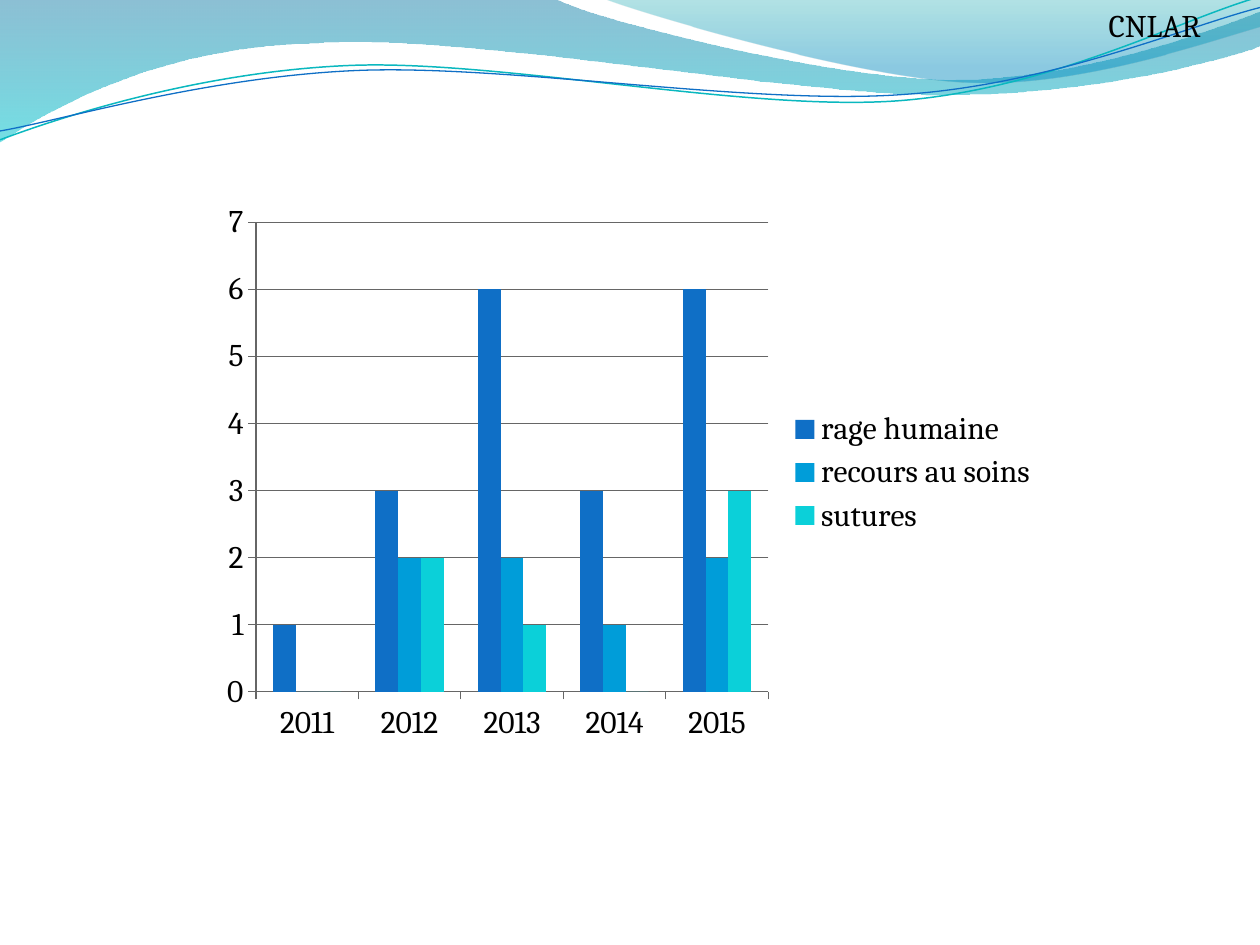
from dataclasses import dataclass
from math import cos, radians, sin

from lxml.etree import SubElement
from pptx import Presentation
from pptx.chart.data import CategoryChartData
from pptx.dml.color import RGBColor
from pptx.enum.chart import XL_CHART_TYPE, XL_LEGEND_POSITION, XL_TICK_MARK
from pptx.oxml.ns import qn
from pptx.util import Inches, Pt


@dataclass(frozen=True)
class Theme:
    font: str = "Cambria"
    size: int = 18
    ink: str = "000000"
    axis: str = "666666"
    series: tuple = ("0F6FC6", "009DD9", "0BD0D9")
    back_wave: tuple = ((0, "0074A1", 45), (1, "00C6CF", 55))
    front_wave: tuple = ((0, "00A1A9", 30), (0.8, "008BBF", 45))
    teal_line: str = "0AB8BF"
    blue_line: str = "0F6FC6"


THEME = Theme()
STRAND_TILT = 2.7

BACK_WAVE = [
    (0, 0), (4.4, -0.01),
    (4.76, 0.17, 6.64, 0.63, 7.58, 0.63),
    (8.53, 0.63, 9.58, 0.26, 10, 0.09),
    (10.01, 0.36),
    (9.83, 0.44, 8.7, 0.76, 7.46, 0.75),
    (6.22, 0.75, 3.82, 0.28, 2.57, 0.34),
    (1.29, 0.36, 0.46, 0.83, -0.01, 1.13),
]
FRONT_WAVE = [
    (4.79, -0.01),
    (5.09, 0.11, 6.82, 0.62, 7.69, 0.65),
    (8.56, 0.69, 9.61, 0.32, 10, 0.21),
    (10, 0),
]
TEAL_STRAND = [
    (0, 1.11),
    (0.48, 0.93, 1.58, 0.57, 2.77, 0.52),
    (3.95, 0.47, 5.93, 0.89, 7.13, 0.8),
    (8.33, 0.71, 9.38, 0.15, 9.98, -0.02),
]
BLUE_STRAND = [
    (0, 1.04),
    (0.47, 0.96, 1.64, 0.61, 2.83, 0.56),
    (4.03, 0.51, 5.97, 0.84, 7.17, 0.75),
    (8.36, 0.67, 9.41, 0.21, 10, 0.06),
]


def rgb(value):
    return RGBColor.from_string(value)


def pairs(step):
    return list(zip(step[0::2], step[1::2]))


def level(path, center):
    turn, (cx, cy) = radians(STRAND_TILT), center
    return [
        tuple(
            value
            for x, y in pairs(step)
            for value in (
                cx + (x - cx) * cos(turn) - (y - cy) * sin(turn),
                cy + (x - cx) * sin(turn) + (y - cy) * cos(turn),
            )
        )
        for step in path
    ]


def add_outline(slide, path, left, top, closed):
    steps = [
        [(left + Inches(x), top + Inches(y)) for x, y in pairs(step)]
        for step in path
    ]
    builder = slide.shapes.build_freeform(*steps[0][-1], scale=1.0)
    builder.add_line_segments([step[-1] for step in steps[1:]], close=closed)
    outline = builder.convert_to_shape()
    outline.shadow.inherit = False
    segments = list(outline._element.spPr.iter(qn("a:lnTo")))
    for segment, step in zip(segments, steps[1:]):
        if len(step) == 1:
            continue
        curve = SubElement(segment.getparent(), qn("a:cubicBezTo"))
        for x, y in step:
            point = SubElement(curve, qn("a:pt"))
            point.set("x", str(x - outline.left))
            point.set("y", str(y - outline.top))
        segment.getparent().replace(segment, curve)
    return outline


def add_wave(slide, path, left, top, stops):
    wave = add_outline(slide, path, left, top, closed=True)
    wave.line.fill.background()
    wave.fill.gradient()
    wave.fill.gradient_angle = 270
    for stop, (position, color, _) in zip(wave.fill.gradient_stops, stops):
        stop.position = position
        stop.color.rgb = rgb(color)
    colors = list(wave._element.spPr.iter(qn("a:srgbClr")))
    for color, (_, _, opacity) in zip(colors, stops):
        SubElement(color, qn("a:alpha")).set("val", str(opacity * 1000))


def add_strand(slide, path, center, left, top, color, width):
    strand = add_outline(slide, level(path, center), left, top, closed=False)
    strand.rotation = 360 - STRAND_TILT
    strand.fill.background()
    strand.line.color.rgb = rgb(color)
    strand.line.width = Pt(width)


def add_banner(slide, left, top):
    add_wave(slide, BACK_WAVE, left, top, THEME.back_wave)
    add_wave(slide, FRONT_WAVE, left, top, THEME.front_wave)
    add_strand(slide, TEAL_STRAND, (4.99, 0.57), left, top, THEME.teal_line, 0.85)
    add_strand(slide, BLUE_STRAND, (5, 0.59), left, top, THEME.blue_line, 0.75)


def style_font(font):
    font.name = THEME.font
    font.size = Pt(THEME.size)
    font.color.rgb = rgb(THEME.ink)


def add_rabies_chart(slide, left, top, width, height):
    cases = CategoryChartData()
    cases.categories = ["2011", "2012", "2013", "2014", "2015"]
    cases.add_series("rage humaine", (1, 3, 6, 3, 6))
    cases.add_series("recours au soins", (0, 2, 2, 1, 2))
    cases.add_series("sutures", (0, 2, 1, 0, 3))
    chart = slide.shapes.add_chart(
        XL_CHART_TYPE.COLUMN_CLUSTERED, left, top, width, height, cases
    ).chart
    style_font(chart.font)
    chart.has_title = False
    chart.has_legend = True
    chart.legend.position = XL_LEGEND_POSITION.RIGHT
    chart.legend.include_in_layout = False

    bars = chart.plots[0]
    bars.gap_width = 150
    bars.overlap = 0
    bars.vary_by_categories = False
    for series, color in zip(bars.series, THEME.series):
        series.format.fill.solid()
        series.format.fill.fore_color.rgb = rgb(color)

    years, counts = chart.category_axis, chart.value_axis
    counts.minimum_scale, counts.maximum_scale, counts.major_unit = 0, 7, 1
    counts.has_major_gridlines = True
    for axis in (years, counts):
        axis.major_tick_mark = XL_TICK_MARK.OUTSIDE
    for ruled in (years, counts, counts.major_gridlines):
        ruled.format.line.color.rgb = rgb(THEME.axis)
        ruled.format.line.width = Pt(0.75)


def add_label(slide, left, top, width, height):
    label = slide.shapes.add_textbox(left, top, width, height).text_frame
    label.word_wrap = True
    run = label.paragraphs[0].add_run()
    run.text = "CNLAR"
    style_font(run.font)


def main():
    deck = Presentation()
    deck.slide_width, deck.slide_height = Inches(10), Inches(7.5)
    slide = deck.slides.add_slide(deck.slide_layouts[6])
    add_banner(slide, Inches(0), Inches(0))
    add_rabies_chart(slide, Inches(1.67), Inches(1.53), Inches(6.67), Inches(4.44))
    add_label(slide, Inches(8.7), Inches(0), Inches(1.3), Inches(0.4))
    deck.save("out.pptx")


if __name__ == "__main__":
    main()
